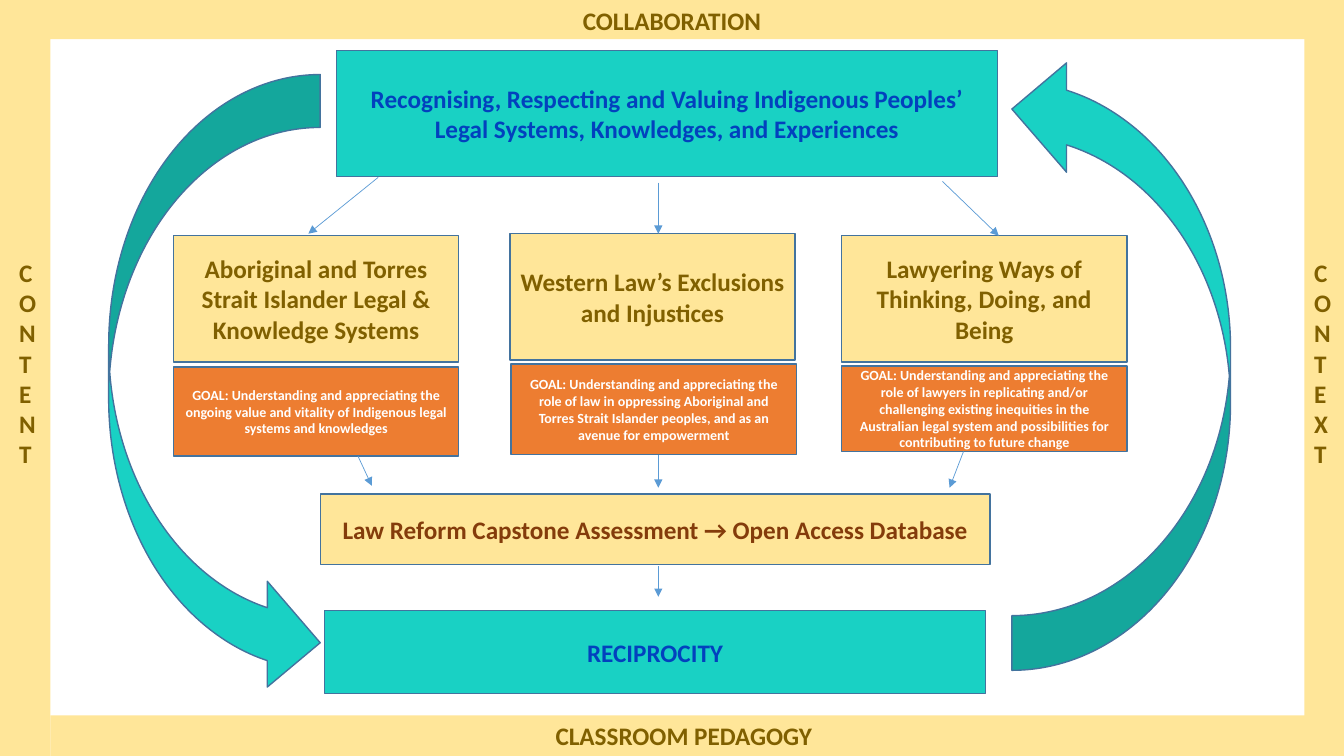
from lxml import etree
from pptx import Presentation, util as u
from pptx.dml.color import RGBColor
from pptx.enum import shapes, text
from pptx.oxml.ns import qn

TEAL, SAND, ORANGE = "19D1C4", "FFE699", "ED7D31"
BLUE, OLIVE, BROWN, WHITE = "0241BE", "806000", "843C0B", "FFFFFF"
OUTLINE, ARROW = "43739E", "5B9BD5"


def paint(shape, fill, outline=OUTLINE):
    shape.fill.solid()
    shape.fill.fore_color.rgb = RGBColor.from_string(fill)
    if outline:
        shape.line.color.rgb = RGBColor.from_string(outline)
        shape.line.width = u.Pt(1)
    else:
        shape.line.fill.background()


def write(shape, words, color, size=18, anchor=text.MSO_ANCHOR.MIDDLE,
          align=text.PP_ALIGN.CENTER):
    frame = shape.text_frame
    frame.text = words
    frame.word_wrap = True
    frame.auto_size = text.MSO_AUTO_SIZE.NONE
    frame.vertical_anchor = anchor
    for paragraph in frame.paragraphs:
        paragraph.alignment = align
        paragraph.font.name = "Calibri"
        paragraph.font.size = u.Pt(size)
        paragraph.font.bold = True
        paragraph.font.color.rgb = RGBColor.from_string(color)


deck = Presentation()
deck.slide_width, deck.slide_height = u.Cm(33.87), u.Cm(19.05)
slide = deck.slides.add_slide(deck.slide_layouts[5])

heading = slide.shapes.title
heading.left, heading.top = u.Cm(8.48), u.Cm(1.27)
heading.width, heading.height = u.Cm(16.66), u.Cm(3.18)
paint(heading, TEAL)
write(heading, "Recognising, Respecting and Valuing Indigenous Peoples’ "
      "Legal Systems, Knowledges, and Experiences", BLUE)

pillars = [
    (4.37, 5.94, "Aboriginal and Torres Strait Islander Legal & Knowledge Systems",
     4.37, 9.25, 2.24,
     "GOAL: Understanding and appreciating the ongoing value and vitality of "
     "Indigenous legal systems and knowledges"),
    (12.85, 5.89, "Western Law’s Exclusions and Injustices",
     12.88, 9.17, 2.29,
     "GOAL: Understanding and appreciating the role of law in oppressing Aboriginal "
     "and Torres Strait Islander peoples, and as an avenue for empowerment"),
    (21.21, 5.94, "Lawyering Ways of Thinking, Doing, and Being",
     21.21, 9.22, 2.16,
     "GOAL: Understanding and appreciating the role of lawyers in replicating and/or "
     "challenging existing inequities in the Australian legal system and "
     "possibilities for contributing to future change"),
]
boxes = [
    (8.08, 12.45, 16.87, 1.78, SAND, BROWN, 18,
     "Law Reform Capstone Assessment → Open Access Database"),
    (8.18, 15.39, 16.66, 2.08, TEAL, BLUE, 18, "RECIPROCITY"),
]
for left, top, topic, goal_left, goal_top, goal_height, goal in pillars:
    boxes.append((left, top, 7.19, 3.18, SAND, OLIVE, 18, topic))
    boxes.append((goal_left, goal_top, 7.19, goal_height, ORANGE, WHITE, 10, goal))

for left, top, width, height, fill, color, size, words in boxes:
    box = slide.shapes.add_shape(shapes.MSO_SHAPE.RECTANGLE, u.Cm(left), u.Cm(top),
                                 u.Cm(width), u.Cm(height))
    box.shadow.inherit = False
    paint(box, fill)
    write(box, words, color, size)

for left, top, width, height, turn in [(2.74, 1.88, 5.33, 15.65, 0),
                                       (25.5, 1.37, 5.51, 15.52, 180)]:
    cycle = slide.shapes.add_shape(shapes.MSO_SHAPE.CURVED_RIGHT_ARROW, u.Cm(left),
                                   u.Cm(top), u.Cm(width), u.Cm(height))
    cycle.shadow.inherit = False
    cycle.rotation = turn
    paint(cycle, TEAL)

for left, top, width, height, words in [(0, 0, 33.87, 0.99, "COLLABORATION"),
                                        (1.27, 18.03, 31.93, 1.02, "CLASSROOM PEDAGOGY"),
                                        (0, 0.99, 1.27, 18.06, "CONTENT"),
                                        (32.87, 0.99, 1, 18.06, "CONTEXT")]:
    border = slide.shapes.add_shape(shapes.MSO_SHAPE.RECTANGLE, u.Cm(left), u.Cm(top),
                                    u.Cm(width), u.Cm(height))
    border.shadow.inherit = False
    paint(border, SAND, None)
    if height > width:
        write(border, "\n".join(words), OLIVE, anchor=text.MSO_ANCHOR.TOP,
              align=text.PP_ALIGN.LEFT)
        border.text_frame.margin_top = u.Cm(5.49)
        border.text_frame.margin_left = u.Cm(0.25 if left else 0.48)
        border.text_frame.margin_right = 0
    else:
        write(border, words, OLIVE, anchor=text.MSO_ANCHOR.TOP)

for x1, y1, x2, y2 in [(9.53, 4.47, 7.77, 5.89), (16.59, 4.6, 16.59, 5.89),
                       (23.75, 4.57, 25.17, 5.94), (9.02, 11.49, 9.37, 12.24),
                       (16.59, 11.46, 16.59, 12.29), (24.28, 11.38, 23.93, 12.29),
                       (16.59, 14.27, 16.59, 15.04)]:
    step = slide.shapes.add_connector(shapes.MSO_CONNECTOR.STRAIGHT, u.Cm(x1), u.Cm(y1),
                                      u.Cm(x2), u.Cm(y2))
    step.line.color.rgb = RGBColor.from_string(ARROW)
    step.line.width = u.Pt(0.5)
    etree.SubElement(step.line._get_or_add_ln(), qn("a:tailEnd"), type="triangle")
    etree.SubElement(step._element.spPr, qn("a:effectLst"))

deck.save("out.pptx")
